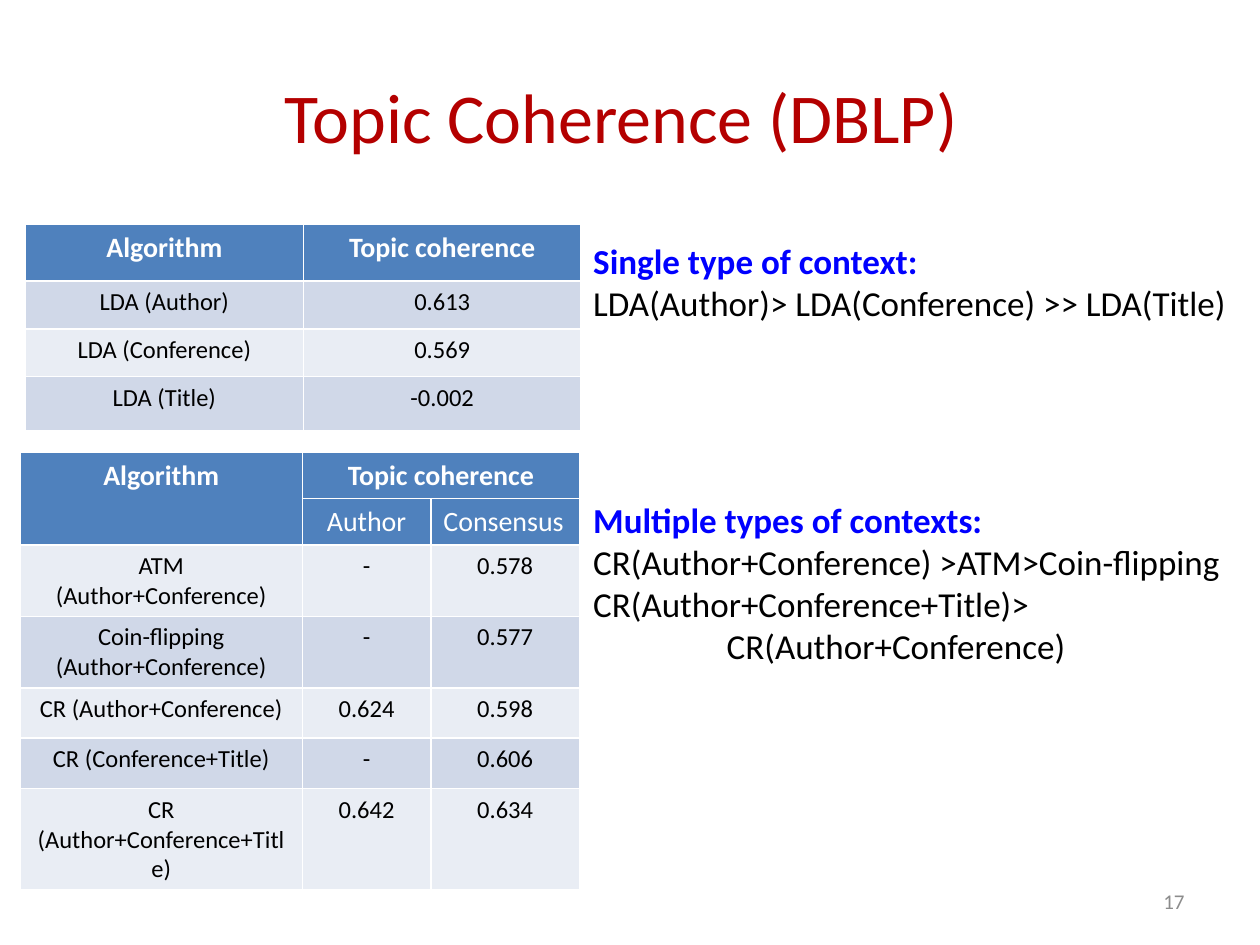
from dataclasses import dataclass

from pptx import Presentation
from pptx.dml.color import RGBColor
from pptx.enum.text import MSO_ANCHOR, PP_ALIGN
from pptx.slide import Slide
from pptx.util import Inches, Pt

COLORS = {
    "title": "B40000",
    "heading": "0000FF",
    "body": "000000",
    "number": "8C8C8C",
    "header": "4F81BD",
    "header_text": "FFFFFF",
    "dark_band": "D0D8E8",
    "light_band": "E9EDF4",
}
FONT = "Calibri"


@dataclass(frozen=True)
class Line:
    text: str
    size: int
    color: str
    bold: bool = False
    align: PP_ALIGN = PP_ALIGN.LEFT
    indent: float = 0


@dataclass(frozen=True)
class TextBlock:
    box: tuple[float, float, float, float]
    lines: list[Line]
    anchor: MSO_ANCHOR = MSO_ANCHOR.TOP


@dataclass(frozen=True)
class ResultTable:
    left: float
    top: float
    columns: list[float]
    heights: list[float]
    rows: list[list[str]]
    header_rows: int
    merges: list[tuple[int, int, int, int]]


def format_paragraph(paragraph, line: Line) -> None:
    paragraph.text = line.text
    paragraph.alignment = line.align
    if line.indent:
        paragraph._p.get_or_add_pPr().set("marL", str(Inches(line.indent)))
    for run in paragraph.runs:
        run.font.name = FONT
        run.font.size = Pt(line.size)
        run.font.bold = line.bold
        run.font.color.rgb = RGBColor.from_string(COLORS[line.color])


def draw_text(slide: Slide, block: TextBlock) -> None:
    shape = slide.shapes.add_textbox(*map(Inches, block.box))
    text_frame = shape.text_frame
    text_frame.word_wrap = True
    text_frame.vertical_anchor = block.anchor
    text_frame.text = "\n".join(line.text for line in block.lines)
    for paragraph, line in zip(text_frame.paragraphs, block.lines):
        format_paragraph(paragraph, line)


def draw_table(slide: Slide, result: ResultTable) -> None:
    table = slide.shapes.add_table(
        len(result.rows), len(result.columns),
        Inches(result.left), Inches(result.top),
        Inches(sum(result.columns)), Inches(sum(result.heights)),
    ).table
    for column, width in zip(table.columns, result.columns):
        column.width = Inches(width)
    for row, height in zip(table.rows, result.heights):
        row.height = Inches(height)
    for row_index, texts in enumerate(result.rows):
        is_header = row_index < result.header_rows
        band = "dark_band" if row_index % 2 else "light_band"
        for column_index, text in enumerate(texts):
            cell = table.cell(row_index, column_index)
            cell.fill.solid()
            cell.fill.fore_color.rgb = RGBColor.from_string(COLORS["header" if is_header else band])
            align = PP_ALIGN.LEFT if text == "Consensus" else PP_ALIGN.CENTER
            line = Line(
                text,
                16 if is_header else 14,
                "header_text" if is_header else "body",
                row_index == 0,
                align,
            )
            format_paragraph(cell.text_frame.paragraphs[0], line)
    for first_row, first_column, last_row, last_column in result.merges:
        table.cell(first_row, first_column).merge(table.cell(last_row, last_column))


TEXT_BLOCKS = [
    TextBlock(
        (0.43, 0.29, 9, 1.25),
        [Line("Topic Coherence (DBLP)", 40, "title", align=PP_ALIGN.CENTER)],
        MSO_ANCHOR.MIDDLE,
    ),
    TextBlock(
        (4.61, 1.85, 5.28, 1.11),
        [
            Line("Single type of context:", 20, "heading", True),
            Line("LDA(Author)> LDA(Conference) >> LDA(Title)", 20, "body"),
        ],
    ),
    TextBlock(
        (4.61, 3.91, 5.47, 1.45),
        [
            Line("Multiple types of contexts:", 20, "heading", True),
            Line("CR(Author+Conference) >ATM>Coin-flipping", 20, "body"),
            Line("CR(Author+Conference+Title)>", 20, "body"),
            Line("CR(Author+Conference)", 20, "body", indent=1.06),
        ],
    ),
    TextBlock(
        (7.17, 6.95, 2.33, 0.4),
        [Line("17", 12, "number", align=PP_ALIGN.RIGHT)],
        MSO_ANCHOR.MIDDLE,
    ),
]

TABLES = [
    ResultTable(
        0.2, 1.78, [2.21, 2.2], [0.45, 0.38, 0.38, 0.43],
        [
            ["Algorithm", "Topic coherence"],
            ["LDA (Author)", "0.613"],
            ["LDA (Conference)", "0.569"],
            ["LDA (Title)", "-0.002"],
        ],
        1, [],
    ),
    ResultTable(
        0.16, 3.59, [2.24, 1.02, 1.18], [0.32, 0.3, 0.55, 0.55, 0.4, 0.4, 0.55],
        [
            ["Algorithm", "Topic coherence", ""],
            ["", "Author", "Consensus"],
            ["ATM (Author+Conference)", "-", "0.578"],
            ["Coin-flipping (Author+Conference)", "-", "0.577"],
            ["CR (Author+Conference)", "0.624", "0.598"],
            ["CR (Conference+Title)", "-", "0.606"],
            ["CR (Author+Conference+Title)", "0.642", "0.634"],
        ],
        2, [(0, 0, 1, 0), (0, 1, 0, 2)],
    ),
]


def main() -> None:
    presentation = Presentation()
    presentation.slide_width = Inches(10)
    presentation.slide_height = Inches(7.5)
    slide = presentation.slides.add_slide(presentation.slide_layouts[6])
    for block in TEXT_BLOCKS:
        draw_text(slide, block)
    for result in TABLES:
        draw_table(slide, result)
    presentation.save("out.pptx")


if __name__ == "__main__":
    main()
